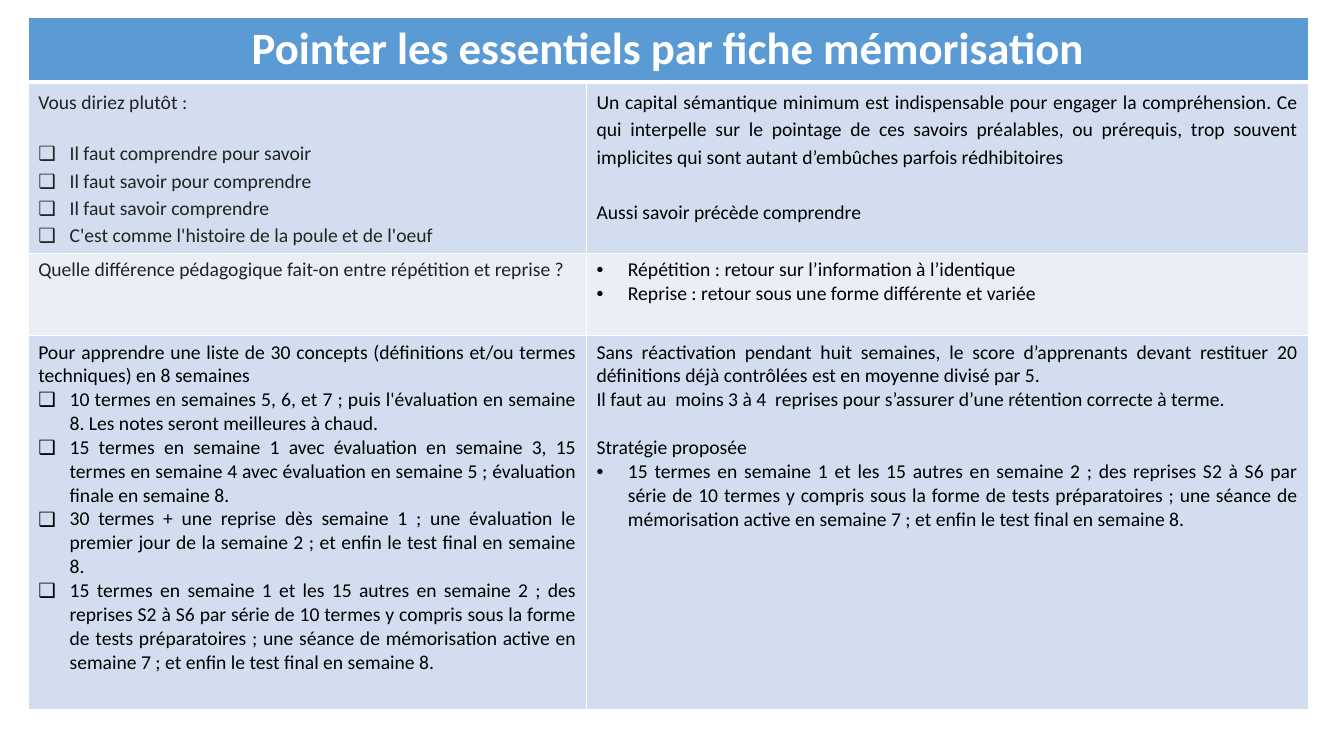
"""Build a slide holding a two-column table on memorisation sheets."""
from lxml.etree import SubElement
from pptx import Presentation
from pptx.dml.color import RGBColor
from pptx.enum.text import PP_ALIGN as Align
from pptx.oxml import parse_xml
from pptx.oxml.ns import nsdecls, qn
from pptx.util import Cm, Pt

FONT = "Calibri"
BLACK, GREY, WHITE = "000000", "222222", "FFFFFF"
BOX, DOT = "❑", "•"
TITLE = "Pointer les essentiels par fiche mémorisation"
BEST_PLAN = (
    "15 termes en semaine 1 et les 15 autres en semaine 2 ; des reprises S2 à S6 par série "
    "de 10 termes y compris sous la forme de tests préparatoires ; une séance de mémorisation "
    "active en semaine 7 ; et enfin le test final en semaine 8."
)

# Each paragraph: bullet, text, space after in points.
ROWS = [
    dict(height=4.28, fill="D2DEEF", spacing=1.15, answers=[
        dict(color=GREY, align=Align.LEFT, paragraphs=[
            ("", "Vous diriez plutôt :", 17),
            (BOX, "Il faut comprendre pour savoir", 0),
            (BOX, "Il faut savoir pour comprendre", 0),
            (BOX, "Il faut savoir comprendre", 0),
            (BOX, "C'est comme l'histoire de la poule et de l'oeuf", 0),
        ]),
        dict(color=BLACK, align=Align.JUSTIFY, paragraphs=[
            ("", "Un capital sémantique minimum est indispensable pour engager la compréhension. "
                 "Ce qui interpelle sur le pointage de ces savoirs préalables, ou prérequis, trop "
                 "souvent implicites qui sont autant d’embûches parfois rédhibitoires", 19.65),
            ("", "Aussi savoir précède comprendre", 0),
        ]),
    ]),
    dict(height=2.07, fill="EAEFF7", spacing=1.0, answers=[
        dict(color=GREY, align=Align.LEFT, paragraphs=[
            ("", "Quelle différence pédagogique fait-on entre répétition et reprise ?", 0),
        ]),
        dict(color=BLACK, align=Align.JUSTIFY, paragraphs=[
            (DOT, "Répétition : retour sur l’information à l’identique", 0),
            (DOT, "Reprise : retour sous une forme différente et variée", 0),
        ]),
    ]),
    dict(height=9.42, fill="D2DEEF", spacing=1.0, answers=[
        dict(color=BLACK, align=Align.JUSTIFY, paragraphs=[
            ("", "Pour apprendre une liste de 30 concepts (définitions et/ou termes techniques) "
                 "en 8 semaines", 0),
            (BOX, "10 termes en semaines 5, 6, et 7 ; puis l'évaluation en semaine 8. "
                  "Les notes seront meilleures à chaud.", 0),
            (BOX, "15 termes en semaine 1 avec évaluation en semaine 3, 15 termes en semaine 4 "
                  "avec évaluation en semaine 5 ; évaluation finale en semaine 8.", 0),
            (BOX, "30 termes + une reprise dès semaine 1 ; une évaluation le premier jour de la "
                  "semaine 2 ; et enfin le test final en semaine 8.", 0),
            (BOX, BEST_PLAN, 0),
        ]),
        dict(color=BLACK, align=Align.JUSTIFY, paragraphs=[
            ("", "Sans réactivation pendant huit semaines, le score d’apprenants devant restituer "
                 "20 définitions déjà contrôlées est en moyenne divisé par 5.", 0),
            ("", "Il faut au  moins 3 à 4  reprises pour s’assurer d’une rétention correcte "
                 "à terme.", 17.1),
            ("", "Stratégie proposée", 0),
            (DOT, BEST_PLAN, 0),
        ]),
    ]),
]
TITLE_HEIGHT = 1.64
COLUMN_WIDTHS = [14.07, 18.19]
LEFT, TOP = 0.71, 0.43
INDENT = Cm(0.79)


def rgb(code):
    return RGBColor.from_string(code)


def paint(cell, fill, top=1, bottom=1):
    cell.fill.solid()
    cell.fill.fore_color.rgb = rgb(fill)
    edges = [("lnL", 1), ("lnR", 1), ("lnT", top), ("lnB", bottom)]
    for place, (edge, width) in enumerate(edges):
        line = parse_xml(
            f'<a:{edge} {nsdecls("a")} w="{Pt(width)}"><a:solidFill>'
            f'<a:srgbClr val="{WHITE}"/></a:solidFill></a:{edge}>')
        cell._tc.get_or_add_tcPr().insert(place, line)


def add_text(paragraph, text, size, color, align, bold=False):
    paragraph.alignment = align
    run = paragraph.add_run()
    run.text = text
    run.font.name = FONT
    run.font.size = Pt(size)
    run.font.bold = bold
    run.font.color.rgb = rgb(color)


def add_bullet(paragraph, mark):
    properties = paragraph._p.get_or_add_pPr()
    properties.set("marL", str(INDENT))
    properties.set("indent", str(-INDENT))
    SubElement(properties, qn("a:buFont")).set("typeface", "Arial")
    SubElement(properties, qn("a:buChar")).set("char", mark)


def write_answer(cell, answer, spacing):
    frame = cell.text_frame
    for index, (mark, text, after) in enumerate(answer["paragraphs"]):
        paragraph = frame.add_paragraph() if index else frame.paragraphs[0]
        add_text(paragraph, text, 14, answer["color"], answer["align"])
        paragraph.line_spacing = spacing
        paragraph.space_after = Pt(after)
        if mark:
            add_bullet(paragraph, mark)


def main():
    deck = Presentation()
    deck.slide_width, deck.slide_height = Cm(33.87), Cm(19.05)
    slide = deck.slides.add_slide(deck.slide_layouts[6])
    heights = [TITLE_HEIGHT] + [row["height"] for row in ROWS]
    table = slide.shapes.add_table(
        len(heights), len(COLUMN_WIDTHS), Cm(LEFT), Cm(TOP),
        Cm(sum(COLUMN_WIDTHS)), Cm(sum(heights))).table
    for column, width in zip(table.columns, COLUMN_WIDTHS):
        column.width = Cm(width)
    for table_row, height in zip(table.rows, heights):
        table_row.height = Cm(height)

    for header in table.rows[0].cells:
        paint(header, "5B9BD5", bottom=3)
    banner = table.cell(0, 0)
    banner.merge(table.cell(0, 1))
    add_text(banner.text_frame.paragraphs[0], TITLE, 32, WHITE, Align.CENTER, bold=True)

    for number, row in enumerate(ROWS, start=1):
        for column, answer in enumerate(row["answers"]):
            cell = table.cell(number, column)
            paint(cell, row["fill"], top=3 if number == 1 else 1)
            write_answer(cell, answer, row["spacing"])
    deck.save("out.pptx")


if __name__ == "__main__":
    main()
